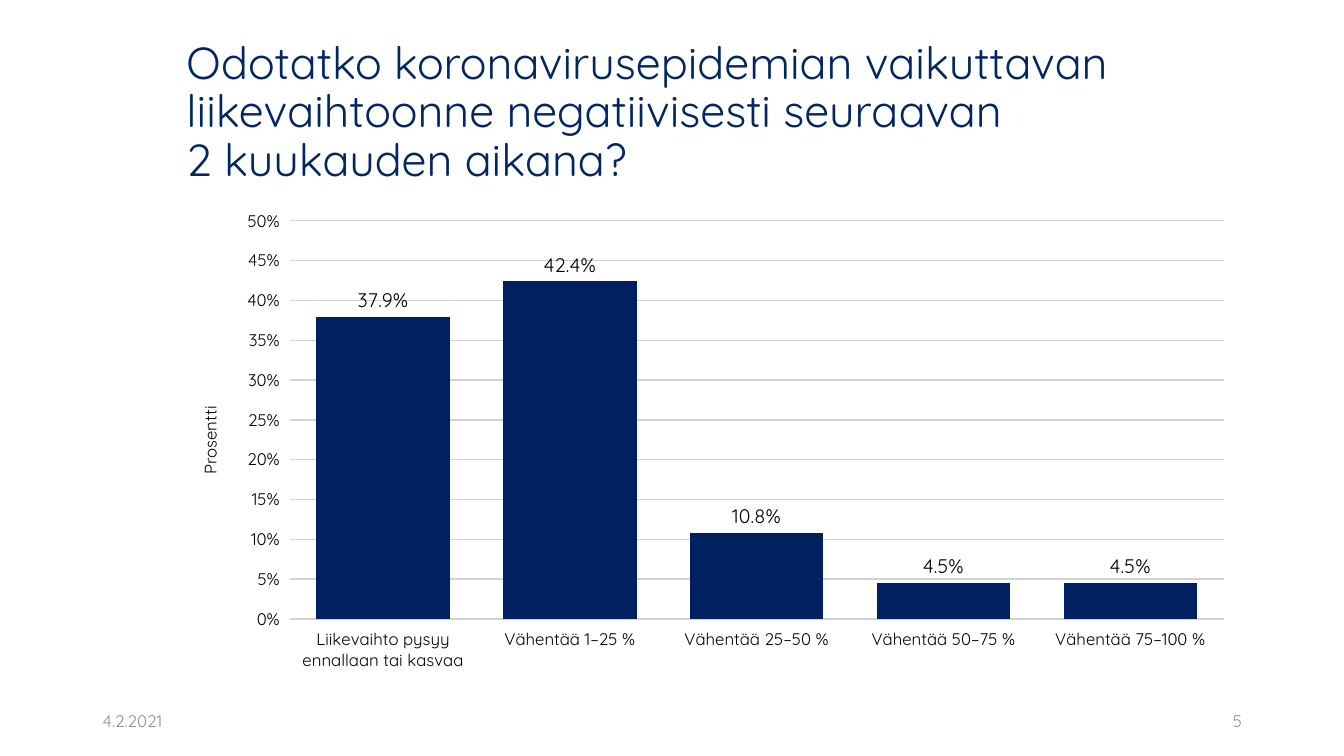
import dataclasses

import lxml.etree
import pptx
import pptx.chart.data
import pptx.dml.color
import pptx.enum.chart
import pptx.enum.text
import pptx.oxml.ns
import pptx.util
from pptx.util import Cm


@dataclasses.dataclass(frozen=True)
class Theme:
    font: str = "Quicksand"
    title: str = "002663"
    footer: str = "8C8E9F"
    bar: str = "002060"
    grid: str = "D3D3D3"
    text: str = "000000"
    background: str = "FFFFFF"
    title_size: int = 32
    label_size: int = 14
    axis_size: int = 12
    chart_size: int = 11


THEME = Theme()
ANSWERS = {
    "Liikevaihto pysyy ennallaan tai kasvaa": 0.379,
    "Vähentää 1–25 %": 0.424,
    "Vähentää 25–50 %": 0.108,
    "Vähentää 50–75 %": 0.045,
    "Vähentää 75–100 %": 0.045,
}
PLOT_LAYOUT = {"x": 0.106, "y": 0.04, "w": 0.875, "h": 0.83}


def color(value):
    return pptx.dml.color.RGBColor.from_string(value)


def style_font(font, size, value):
    font.name = THEME.font
    font.size = pptx.util.Pt(size)
    font.bold = False
    font.color.rgb = color(value)


def add_text(slide, box, lines, size, value, alignment, line_spacing=1.0):
    frame = slide.shapes.add_textbox(*box).text_frame
    frame.word_wrap = True
    frame.vertical_anchor = pptx.enum.text.MSO_ANCHOR.MIDDLE
    paragraph = frame.paragraphs[0]
    paragraph.alignment = alignment
    paragraph.line_spacing = line_spacing
    for index, line in enumerate(lines):
        if index:
            paragraph.add_line_break()
        run = paragraph.add_run()
        run.text = line
        style_font(run.font, size, value)


def add_title(slide, box):
    lines = [
        "Odotatko koronavirusepidemian vaikuttavan liikevaihtoonne negatiivisesti seuraavan",
        "2 kuukauden aikana?",
    ]
    add_text(slide, box, lines, THEME.title_size, THEME.title,
             pptx.enum.text.PP_ALIGN.LEFT, 0.9)


def add_footer(slide, box):
    left, top, width, height = box
    field_width = Cm(7.62)
    fields = [
        ("4.2.2021", left, pptx.enum.text.PP_ALIGN.LEFT),
        ("5", left + width - field_width, pptx.enum.text.PP_ALIGN.RIGHT),
    ]
    for text, field_left, alignment in fields:
        add_text(slide, (field_left, top, field_width, height), [text],
                 THEME.axis_size, THEME.footer, alignment)


def place_plot(chart):
    qualify = pptx.oxml.ns.qn
    plot_area = chart.element.find(".//" + qualify("c:plotArea"))
    for layout in plot_area.findall(qualify("c:layout")):
        plot_area.remove(layout)
    layout = lxml.etree.Element(qualify("c:layout"))
    manual = lxml.etree.SubElement(layout, qualify("c:manualLayout"))
    settings = {"layoutTarget": "inner", "xMode": "edge", "yMode": "edge", **PLOT_LAYOUT}
    for name, value in settings.items():
        lxml.etree.SubElement(manual, qualify("c:" + name)).set("val", str(value))
    plot_area.insert(0, layout)


def style_value_axis(axis):
    axis.minimum_scale = 0
    axis.maximum_scale = 0.5
    axis.major_unit = 0.05
    axis.tick_labels.number_format = "0%"
    axis.tick_labels.number_format_is_linked = False
    axis.has_major_gridlines = True
    axis.major_gridlines.format.line.color.rgb = color(THEME.grid)
    axis.major_gridlines.format.line.width = pptx.util.Pt(1)
    frame = axis.axis_title.text_frame
    run = frame.paragraphs[0].add_run()
    run.text = "Prosentti"
    style_font(run.font, THEME.axis_size, THEME.text)
    body = axis.axis_title.element.find(".//" + pptx.oxml.ns.qn("a:bodyPr"))
    body.set("rot", "-5400000")
    body.set("vert", "horz")


def add_answer_chart(slide, box):
    data = pptx.chart.data.CategoryChartData(number_format="0.0%")
    data.categories = list(ANSWERS)
    data.add_series("Series 1", list(ANSWERS.values()))
    chart = slide.shapes.add_chart(
        pptx.enum.chart.XL_CHART_TYPE.COLUMN_CLUSTERED, *box, data).chart
    chart.has_title = False
    chart.has_legend = False
    style_font(chart.font, THEME.chart_size, THEME.text)
    for axis in (chart.category_axis, chart.value_axis):
        axis.format.line.fill.background()
        axis.major_tick_mark = pptx.enum.chart.XL_TICK_MARK.OUTSIDE
        style_font(axis.tick_labels.font, THEME.axis_size, THEME.text)
    style_value_axis(chart.value_axis)

    plot = chart.plots[0]
    plot.gap_width = 40
    plot.vary_by_categories = False
    series = plot.series[0]
    series.format.fill.solid()
    series.format.fill.fore_color.rgb = color(THEME.bar)
    labels = series.data_labels
    labels.show_value = True
    labels.number_format = "0.0%"
    labels.number_format_is_linked = False
    labels.position = pptx.enum.chart.XL_LABEL_POSITION.OUTSIDE_END
    style_font(labels.font, THEME.label_size, THEME.text)
    place_plot(chart)


def main():
    presentation = pptx.Presentation()
    presentation.slide_width = Cm(33.87)
    presentation.slide_height = Cm(19.05)
    slide = presentation.slides.add_slide(presentation.slide_layouts[6])
    slide.background.fill.solid()
    slide.background.fill.fore_color.rgb = color(THEME.background)
    content_left, content_width = Cm(4.45), Cm(26.9)
    add_title(slide, (content_left, Cm(1.02), content_width, Cm(3.68)))
    add_answer_chart(slide, (content_left, Cm(5.08), content_width, Cm(12.09)))
    add_footer(slide, (Cm(2.34), Cm(17.65), Cm(29.21), Cm(1.02)))
    presentation.save("out.pptx")


if __name__ == "__main__":
    main()
